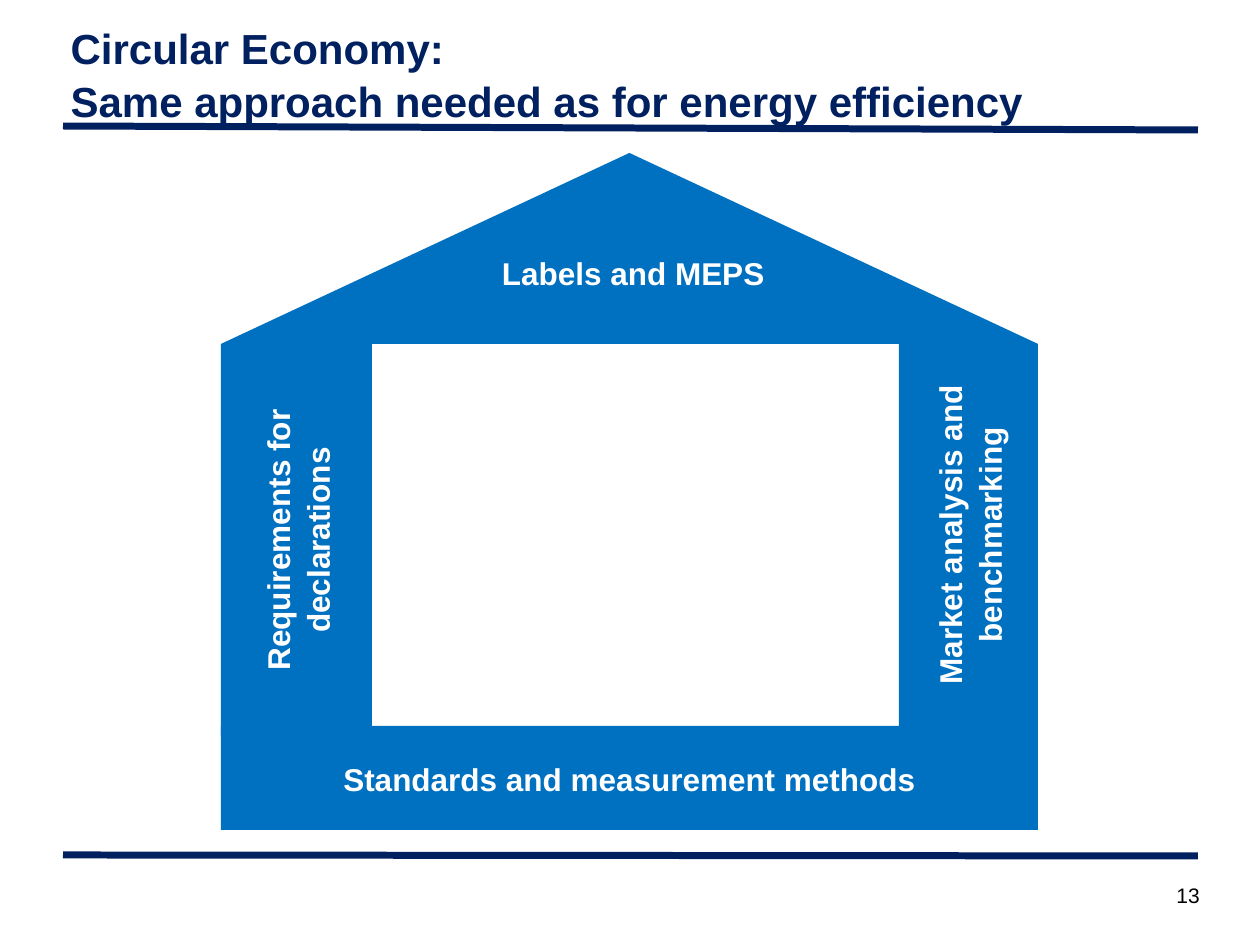
from pptx import Presentation
from pptx.dml.color import RGBColor
from pptx.enum.shapes import MSO_CONNECTOR, MSO_SHAPE
from pptx.enum.text import MSO_ANCHOR as ANCHOR, MSO_AUTO_SIZE, PP_ALIGN as ALIGN
from pptx.oxml.ns import qn
from pptx.util import Emu, Pt
from lxml.etree import SubElement

EMU_PER_PX = 914400 / 126
NAVY, BLUE, WHITE, BLACK = "002060", "0070C0", "FFFFFF", "000000"
TITLE_ONLY = 5


def px(length):
    return Emu(round(length * EMU_PER_PX))


def colour(value):
    return RGBColor.from_string(value)


class SlideBuilder:
    """Holds the house style and the slide being filled."""

    font_name = "Arial"
    label = {"size": Pt(18), "bold": True}
    heading = {"size": Pt(24), "bold": True}
    small = {"size": Pt(12), "bold": False}

    def __init__(self, deck):
        self.slide = deck.slides.add_slide(deck.slide_layouts[TITLE_ONLY])
        self.shapes = self.slide.shapes

    def set_text(self, shape, text, style, text_colour, align, anchor=ANCHOR.MIDDLE, spacing=1.05):
        frame = shape.text_frame
        frame.text = text
        frame_format = {"word_wrap": True, "auto_size": MSO_AUTO_SIZE.NONE,
                        "vertical_anchor": anchor}
        for name, value in frame_format.items():
            setattr(frame, name, value)
        para = frame.paragraphs[0]
        para.alignment = align
        para.line_spacing = spacing
        for span in para.runs:
            for name, value in {"name": self.font_name, **style}.items():
                setattr(span.font, name, value)
            span.font.color.rgb = colour(text_colour)

    def title(self, text, left, top, width, height):
        box = self.shapes.title
        box.left, box.top, box.width, box.height = map(px, (left, top, width, height))
        self.set_text(box, text, self.heading, NAVY, ALIGN.LEFT)

    def rule(self, *ends):
        line = self.shapes.add_connector(MSO_CONNECTOR.STRAIGHT, *map(px, ends))
        line.line.color.rgb = colour(NAVY)
        line.line.width = Pt(4)
        SubElement(line._element.spPr, qn("a:effectLst"))

    def house_part(self, shape, text):
        shape.shadow.inherit = False
        shape.fill.solid()
        shape.fill.fore_color.rgb = colour(BLUE)
        shape.line.fill.background()
        self.set_text(shape, text, self.label, WHITE, ALIGN.CENTER)

    def base(self, text, left, top, width, height):
        shape = self.shapes.add_shape(MSO_SHAPE.RECTANGLE, *map(px, (left, top, width, height)))
        self.house_part(shape, text)

    def wall(self, text, left, top, width, height):
        """Draw an upright wall whose text reads upwards; the box is as seen."""
        shift = (height - width) / 2
        shape = self.shapes.add_shape(
            MSO_SHAPE.RECTANGLE, *map(px, (left - shift, top + shift, height, width)))
        shape.rotation = 270
        self.house_part(shape, text)

    def roof(self, text, left, top, width, height):
        outline = self.shapes.build_freeform(px(left), px(top + height))
        outline.add_line_segments([(px(left + width / 2), px(top)),
                                   (px(left + width), px(top + height))])
        shape = outline.convert_to_shape()
        self.house_part(shape, text)
        shape.text_frame.margin_left = px(20)
        shape.text_frame.margin_top = px(54)

    def page_number(self, text, left, top, width, height):
        box = self.shapes.add_textbox(*map(px, (left, top, width, height)))
        self.set_text(box, text, self.small, BLACK, ALIGN.LEFT, ANCHOR.TOP, 1)


def main():
    deck = Presentation()
    deck.slide_width, deck.slide_height = px(1260), px(945)
    page = SlideBuilder(deck)

    page.rule(63, 126, 1198, 130)
    page.rule(63, 855, 1198, 856)
    page.page_number("13", 1164, 876, 71, 48)

    left, right, eaves, floor = 221, 1038, 344, 726
    width = right - left
    page.base("Standards and measurement methods", left, floor, width, 104)
    page.roof("Labels and MEPS", left, 153, width, eaves - 153)
    page.wall("Market analysis and benchmarking", right - 139, eaves, 139, floor - eaves)
    page.wall("Requirements for declarations", left, eaves, 151, 392)

    page.title("Circular Economy:\vSame approach needed as for energy efficiency",
               58, 19, 1134, 108)
    deck.save("out.pptx")


if __name__ == "__main__":
    main()
